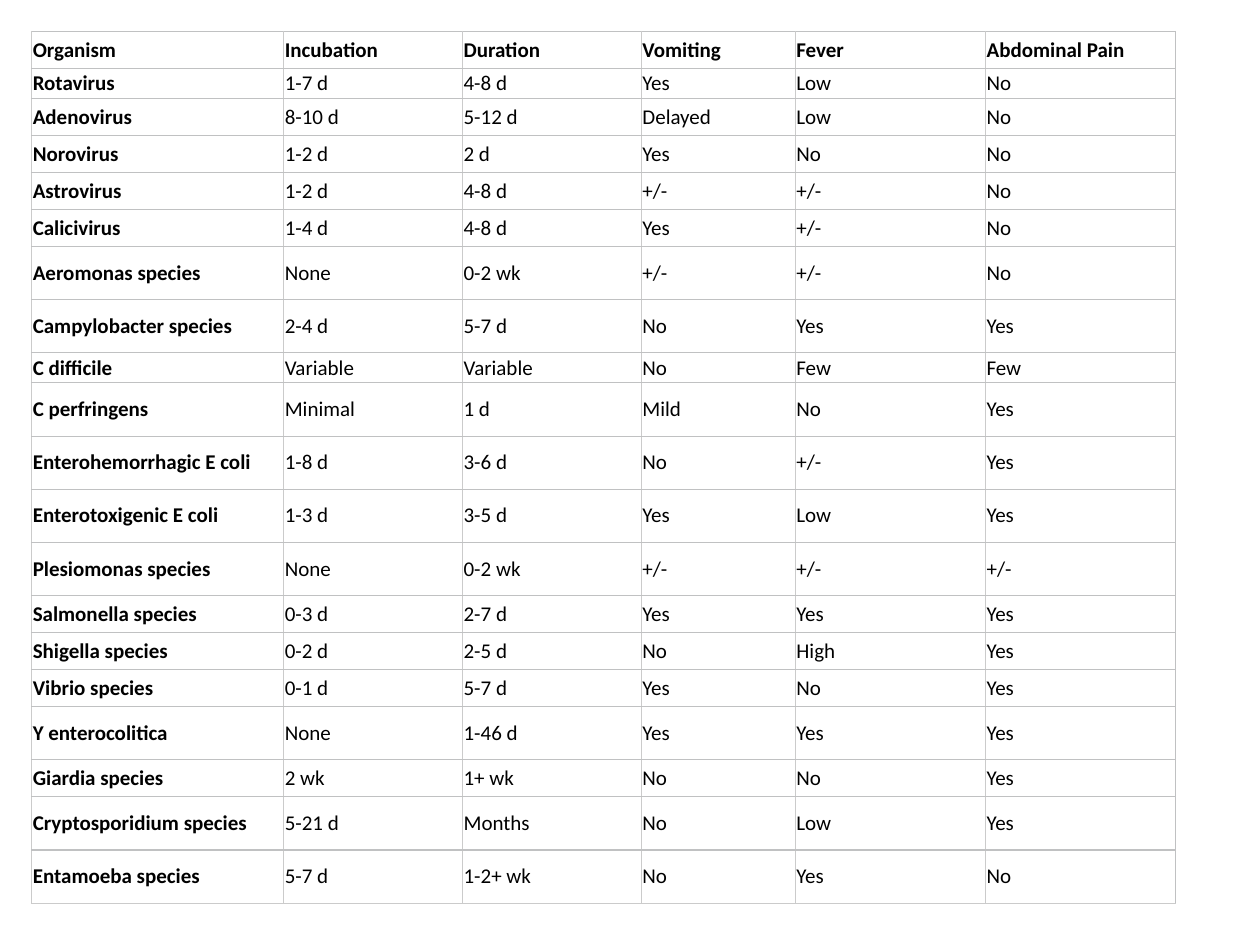
from dataclasses import dataclass

from lxml import etree
from pptx import Presentation
from pptx import util as u
from pptx.dml import color
from pptx.enum import text
from pptx.oxml import ns


@dataclass(frozen=True)
class Theme:
    font: str = "Calibri"
    size: float = 12
    ink: str = "000000"
    paper: str = "FFFFFF"
    column_line: str = "CBCBCB"
    row_line: str = "C0C1C2"
    line_width: float = 0.75
    inset: float = 0.75


SHORT, NORMAL, TALL = 17.15, 21.15, 30.4
COLUMN_WIDTHS = (144, 102.2, 102.2, 88, 108.7, 108.7)
ROWS = (
    (NORMAL, "Organism", "Incubation", "Duration", "Vomiting", "Fever", "Abdominal Pain"),
    (SHORT, "Rotavirus", "1-7 d", "4-8 d", "Yes", "Low", "No"),
    (NORMAL, "Adenovirus", "8-10 d", "5-12 d", "Delayed", "Low", "No"),
    (NORMAL, "Norovirus", "1-2 d", "2 d", "Yes", "No", "No"),
    (NORMAL, "Astrovirus", "1-2 d", "4-8 d", "+/-", "+/-", "No"),
    (NORMAL, "Calicivirus", "1-4 d", "4-8 d", "Yes", "+/-", "No"),
    (TALL, "Aeromonas species", "None", "0-2 wk", "+/-", "+/-", "No"),
    (TALL, "Campylobacter species", "2-4 d", "5-7 d", "No", "Yes", "Yes"),
    (SHORT, "C difficile", "Variable", "Variable", "No", "Few", "Few"),
    (TALL, "C perfringens", "Minimal", "1 d", "Mild", "No", "Yes"),
    (TALL, "Enterohemorrhagic E coli", "1-8 d", "3-6 d", "No", "+/-", "Yes"),
    (TALL, "Enterotoxigenic E coli", "1-3 d", "3-5 d", "Yes", "Low", "Yes"),
    (TALL, "Plesiomonas species", "None", "0-2 wk", "+/-", "+/-", "+/-"),
    (NORMAL, "Salmonella species", "0-3 d", "2-7 d", "Yes", "Yes", "Yes"),
    (NORMAL, "Shigella species", "0-2 d", "2-5 d", "No", "High", "Yes"),
    (NORMAL, "Vibrio species", "0-1 d", "5-7 d", "Yes", "No", "Yes"),
    (TALL, "Y enterocolitica", "None", "1-46 d", "Yes", "Yes", "Yes"),
    (NORMAL, "Giardia species", "2 wk", "1+ wk", "No", "No", "Yes"),
    (TALL, "Cryptosporidium species", "5-21 d", "Months", "No", "Low", "Yes"),
    (TALL, "Entamoeba species", "5-7 d", "1-2+ wk", "No", "Yes", "No"),
)


def write(frame, content, *, font, size, ink, bold=False):
    paragraph = frame.paragraphs[0]
    paragraph.alignment = text.PP_ALIGN.LEFT
    run = paragraph.add_run()
    run.text = content
    run.font.name = font
    run.font.size = u.Pt(size)
    run.font.bold = bold
    run.font.color.rgb = color.RGBColor.from_string(ink)


class SlideBuilder:
    def __init__(self, slide, theme):
        self.slide = slide
        self.theme = theme

    def borders(self, cell, **side_colours):
        properties = cell._tc.get_or_add_tcPr()
        for side, colour in side_colours.items():
            line = etree.SubElement(properties, ns.qn(f"a:ln{side}"),
                                    w=str(u.Pt(self.theme.line_width)))
            fill = etree.SubElement(line, ns.qn("a:solidFill"))
            etree.SubElement(fill, ns.qn("a:srgbClr"), val=colour)

    def cell(self, cell, content, bold):
        theme = self.theme
        cell.margin_left = cell.margin_right = u.Pt(theme.inset)
        cell.margin_top = cell.margin_bottom = u.Pt(theme.inset)
        cell.vertical_anchor = text.MSO_ANCHOR.MIDDLE
        cell.fill.solid()
        cell.fill.fore_color.rgb = color.RGBColor.from_string(theme.paper)
        write(cell.text_frame, content, font=theme.font, size=theme.size,
              ink=theme.ink, bold=bold)

    def table(self, left, top, widths, rows):
        theme = self.theme
        heights = [row[0] for row in rows]
        table = self.slide.shapes.add_table(
            len(rows), len(widths), u.Pt(left), u.Pt(top),
            u.Pt(sum(widths)), u.Pt(sum(heights))).table
        table.horz_banding = False
        for column, width in zip(table.columns, widths):
            column.width = u.Pt(width)
        for i, (height, *contents) in enumerate(rows):
            table.rows[i].height = u.Pt(height)
            for j, content in enumerate(contents):
                cell = table.cell(i, j)
                last_row, last_column = i == len(rows) - 1, j == len(widths) - 1
                self.borders(
                    cell,
                    L=theme.column_line,
                    R=theme.row_line if last_column else theme.column_line,
                    T=theme.row_line,
                    B=theme.column_line if last_row else theme.row_line)
                self.cell(cell, content, bold=i == 0 or j == 0)


def main():
    presentation = Presentation()
    presentation.slide_width, presentation.slide_height = u.Pt(720), u.Pt(540)
    slide = presentation.slides.add_slide(presentation.slide_layouts[6])
    SlideBuilder(slide, Theme()).table(18, 18, COLUMN_WIDTHS, ROWS)
    presentation.save("out.pptx")


if __name__ == "__main__":
    main()
